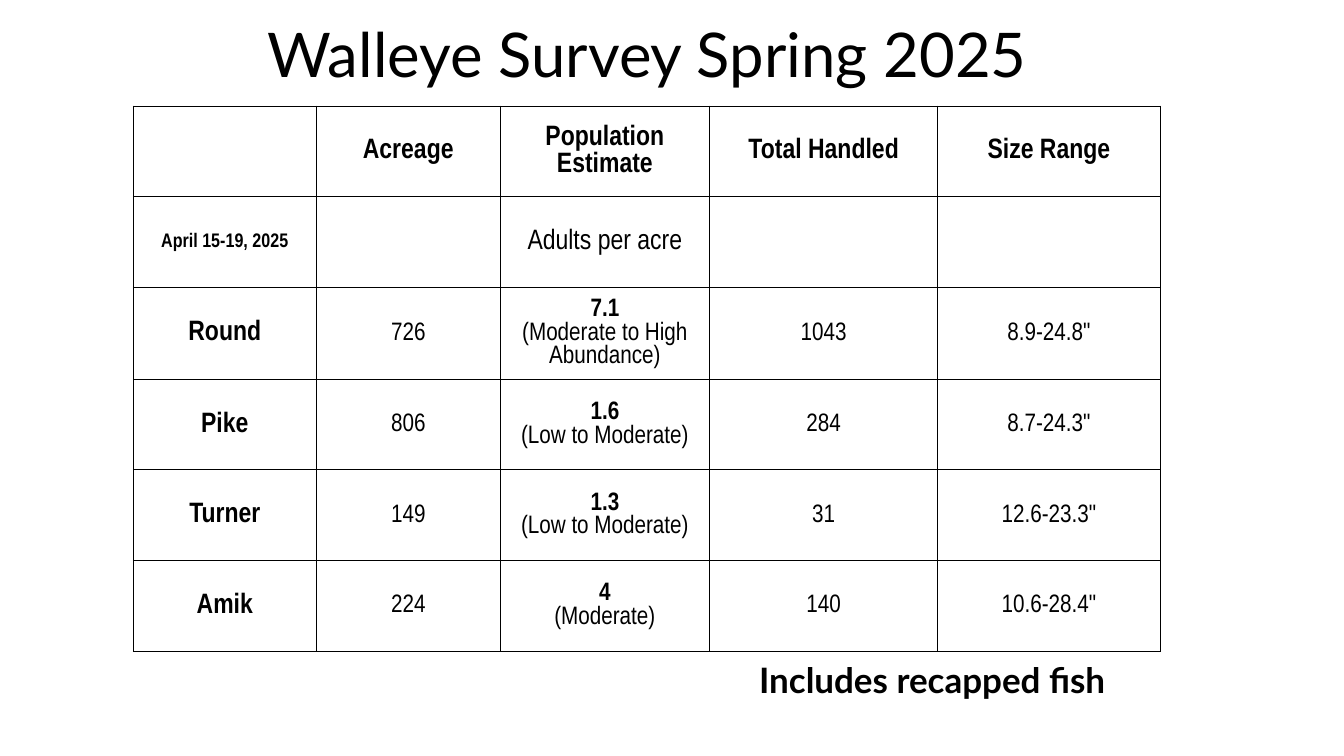
from lxml.etree import SubElement
from pptx import Presentation
from pptx.dml.color import RGBColor
from pptx.enum.text import MSO_ANCHOR as Anchor, PP_ALIGN as Align
from pptx.oxml.ns import qn
from pptx.util import Inches, Pt

BLACK = RGBColor(0, 0, 0)
TITLE_FONT, TABLE_FONT = "Lato", "Arial Narrow"
COLUMN_WIDTHS = [1.82, 1.82, 2.08, 2.26, 2.21]
ROW_HEIGHT = 0.9
SURVEY = [
    ["", "Acreage", "Population Estimate", "Total Handled", "Size Range"],
    ["April 15-19, 2025", "", "Adults per acre", "", ""],
    ["Round", "726", "7.1\n(Moderate to High Abundance)", "1043", '8.9-24.8"'],
    ["Pike", "806", "1.6\n(Low to Moderate)", "284", '8.7-24.3"'],
    ["Turner", "149", "1.3\n(Low to Moderate)", "31", '12.6-23.3"'],
    ["Amik", "224", "4\n(Moderate)", "140", '10.6-28.4"'],
]


def style_paragraph(paragraph, font_name, size, bold):
    """Centre a paragraph and set its black font."""
    paragraph.alignment = Align.CENTER
    font = paragraph.font
    font.name, font.size, font.bold = font_name, Pt(size), bold
    font.color.rgb = BLACK


def add_label(slide, box, text, size, bold=False, line_spacing=None):
    """Add a centred line of text at the top of the given box."""
    label = slide.shapes.add_textbox(*map(Inches, box)).text_frame
    label.word_wrap = True
    label.text = text
    line = label.paragraphs[0]
    line.line_spacing = line_spacing
    style_paragraph(line, TITLE_FONT, size, bold)


def draw_borders(cell):
    """Draw a thin black line on every side of a cell."""
    properties = cell._tc.get_or_add_tcPr()
    for position, side in enumerate(("a:lnL", "a:lnR", "a:lnT", "a:lnB")):
        border = SubElement(properties, qn(side), w=str(Pt(0.5)))
        fill = SubElement(border, qn("a:solidFill"))
        SubElement(fill, qn("a:srgbClr"), val=str(BLACK))
        properties.insert(position, border)


def fill_cell(cell, text, row, column):
    """Write one survey value with the look of its row and column."""
    cell.fill.background()
    draw_borders(cell)
    cell.vertical_anchor = Anchor.MIDDLE
    cell.margin_left = cell.margin_right = cell.margin_top = Inches(0.01)
    cell.margin_bottom = 0
    cell.text = text
    heading = row == 0 or column == 0
    size = 20 if heading or row == 1 else 18
    if (row, column) == (1, 0):
        size = 14
    for position, paragraph in enumerate(cell.text_frame.paragraphs):
        estimate = row > 1 and column == 2 and position == 0
        style_paragraph(paragraph, TABLE_FONT, size, heading or estimate)


def add_survey_table(slide, left, top):
    """Add the lake survey table with its corner at the given place."""
    table = slide.shapes.add_table(
        len(SURVEY), len(COLUMN_WIDTHS), Inches(left), Inches(top),
        Inches(sum(COLUMN_WIDTHS)), Inches(ROW_HEIGHT * len(SURVEY))).table
    table.first_row = table.horz_banding = False
    for column, width in zip(table.columns, COLUMN_WIDTHS):
        column.width = Inches(width)
    for row, values in enumerate(SURVEY):
        table.rows[row].height = Inches(ROW_HEIGHT)
        for column, text in enumerate(values):
            fill_cell(table.cell(row, column), text, row, column)


def main():
    """Build the walleye survey slide."""
    deck = Presentation()
    deck.slide_width, deck.slide_height = Inches(13.33), Inches(7.5)
    slide = deck.slides.add_slide(deck.slide_layouts[6])
    add_label(slide, (0.67, 0.19, 11.5, 1.45), "Walleye Survey Spring 2025", 44,
              line_spacing=0.9)
    add_label(slide, (7.18, 6.48, 4.13, 0.52), "Includes recapped fish", 25, bold=True)
    add_survey_table(slide, 1.32, 1.05)
    deck.save("out.pptx")


if __name__ == "__main__":
    main()
